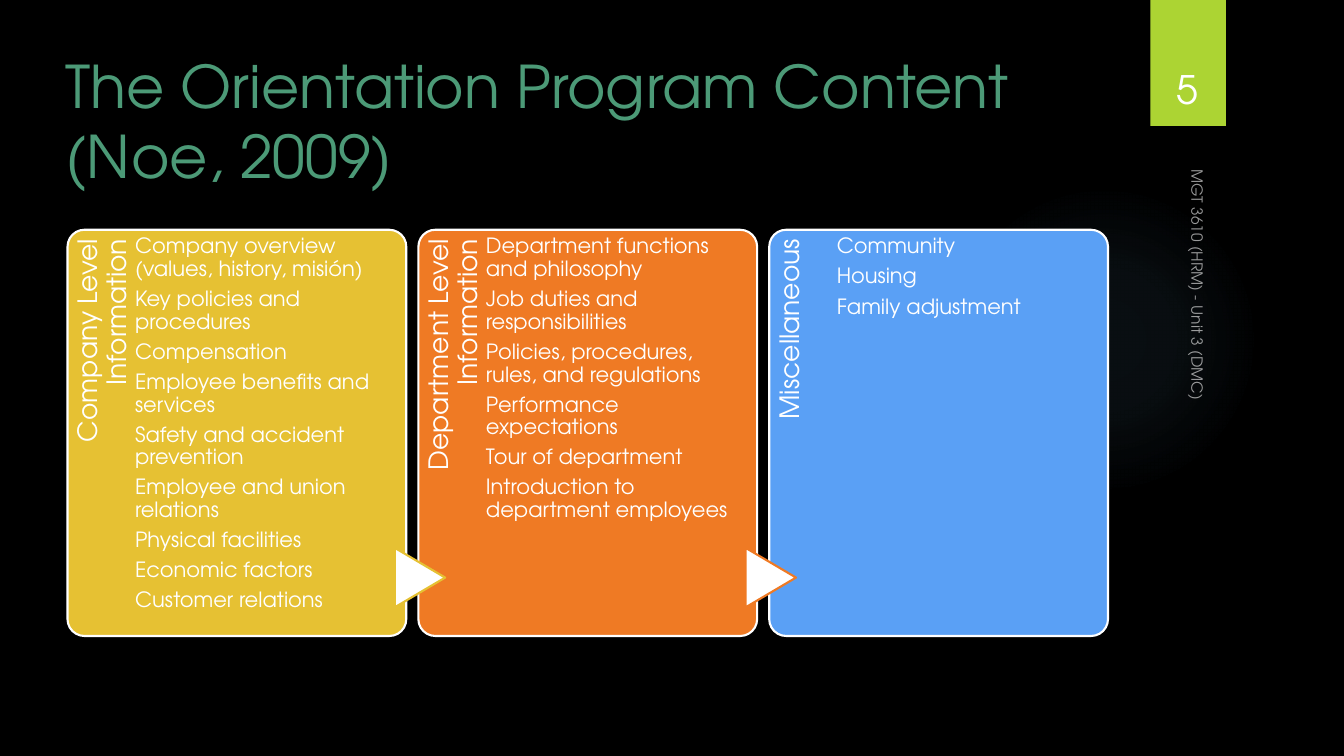
from lxml import etree
from pptx import Presentation, util as u
from pptx.dml.color import RGBColor
from pptx.enum import shapes, text
from pptx.oxml import parse_xml
from pptx.oxml.ns import nsdecls, qn

# Content
TITLE = "The Orientation Program Content (Noe, 2009)"
FOOTER = "MGT 3610 (HRM) - Unit 3 (DMC)"
NUMBER = "5"
PANELS = [
    ("Company Level Information", "gold", [
        "Company overview (values, history, misión)",
        "Key policies and procedures",
        "Compensation",
        "Employee benefits and services",
        "Safety and accident prevention",
        "Employee and union relations",
        "Physical facilities",
        "Economic factors",
        "Customer relations"]),
    ("Department Level Information", "orange", [
        "Department functions and philosophy",
        "Job duties and responsibilities",
        "Policies, procedures, rules, and regulations",
        "Performance expectations",
        "Tour of department",
        "Introduction to department employees"]),
    ("Miscellaneous", "blue", ["Community", "Housing", "Family adjustment"]),
]
COLORS = {"black": "000000", "white": "FFFFFF", "green": "4C9A77", "lime": "ACD433",
          "gold": "E6C133", "orange": "EF7A24", "blue": "5AA0F5", "glow": "7AC4F0"}
FONT = "TeX Gyre Adventor"

# Layout, 100 px to the inch
PX = 9144
PANEL_X, PANEL_Y, PANEL_W, PANEL_H, PITCH = 67, 228, 336, 403, 348
LABEL_W, LABEL_H = 331, 67
ARROW_W, ARROW_H, ARROW_Y = 59, 50, 548
INSET = (10, 5, 10, 5)

ALIGN = text.PP_ALIGN
SHAPE = shapes.MSO_SHAPE


def px(*values):
    return [v * PX for v in values]


def rgb(name):
    return RGBColor.from_string(COLORS[name])


def add_shape(kind, box, fill=None, line=None):
    sp = s.shapes.add_shape(kind, *px(*box))
    sp.shadow.inherit = False
    if fill:
        sp.fill.solid()
        sp.fill.fore_color.rgb = rgb(fill)
    if line:
        sp.line.color.rgb = rgb(line)
        sp.line.width = u.Pt(1.5)
    else:
        sp.line.fill.background()
    return sp


def add_text(lines, box, size, color="white", inset=INSET, align=ALIGN.LEFT,
             bottom=False, rotation=0, spacing=None):
    sp = s.shapes.add_textbox(*px(*box))
    sp.rotation = rotation
    tf = sp.text_frame
    tf.word_wrap = True
    tf.vertical_anchor = text.MSO_ANCHOR.BOTTOM if bottom else text.MSO_ANCHOR.TOP
    tf.margin_left, tf.margin_top, tf.margin_right, tf.margin_bottom = px(*inset)
    tf.text = "\n".join(lines)
    for p in tf.paragraphs:
        p.alignment = align
        if spacing:
            p.line_spacing = spacing
            p.space_after = u.Pt(size * 0.35)
        for r in p.runs:
            r.font.name = FONT
            r.font.size = u.Pt(size)
            r.font.color.rgb = rgb(color)
    return sp


prs = Presentation()
prs.slide_width, prs.slide_height = px(1333, 750)
s = prs.slides.add_slide(prs.slide_layouts[6])
s.background.fill.solid()
s.background.fill.fore_color.rgb = rgb("black")

# Soft glow, fading outwards from the centre
glow = add_shape(SHAPE.OVAL, (941, 183, 308, 308))
stops = "".join(
    f'<a:gs pos="{pos}000"><a:srgbClr val="{COLORS["glow"]}"><a:alpha val="{alpha}000"/>'
    "</a:srgbClr></a:gs>" for pos, alpha in [(0, 7), (36, 6), (69, 0)])
gradient = parse_xml(
    f'<a:gradFill {nsdecls("a")}><a:gsLst>{stops}</a:gsLst><a:path path="circle">'
    '<a:fillToRect l="50000" t="50000" r="50000" b="50000"/></a:path></a:gradFill>')
glow._element.spPr.find(qn("a:prstGeom")).addnext(gradient)

# Number tab, title and footer
add_shape(SHAPE.RECTANGLE, (1141, 0, 75, 125), "lime")
add_text([TITLE], (55, 44, 1040, 152), 42, "green")
footer = add_text([FOOTER], (979, 353, 422, 33), 11, bottom=True, rotation=90)
for color in footer._element.iter(qn("a:srgbClr")):
    etree.SubElement(color, qn("a:alpha")).set("val", "60000")
add_text([NUMBER], (1132, 32, 92, 84), 28, align=ALIGN.CENTER, bottom=True)

# Panels, each later one with an arrow in the colour of the panel before
for i, (label, fill, items) in enumerate(PANELS):
    x = PANEL_X + i * PITCH
    panel = add_shape(SHAPE.ROUNDED_RECTANGLE, (x, PANEL_Y, PANEL_W, PANEL_H), fill, "white")
    panel.adjustments[0] = 0.05
    label_box = (x + (LABEL_H - LABEL_W) // 2, PANEL_Y + (LABEL_W - LABEL_H) // 2,
                 LABEL_W, LABEL_H)
    add_text([label], label_box, 19, inset=(0, 7, 9, 0), align=ALIGN.RIGHT,
             rotation=270, spacing=0.9)
    if i:
        arrow = add_shape(SHAPE.FLOWCHART_EXTRACT, (x - 28, ARROW_Y, ARROW_W, ARROW_H),
                          "white", PANELS[i - 1][1])
        arrow.rotation = 90
    add_text(items, (x + LABEL_H, PANEL_Y, 250, PANEL_H), 15, inset=(0, 6, 0, 0), spacing=0.9)

prs.save("out.pptx")
